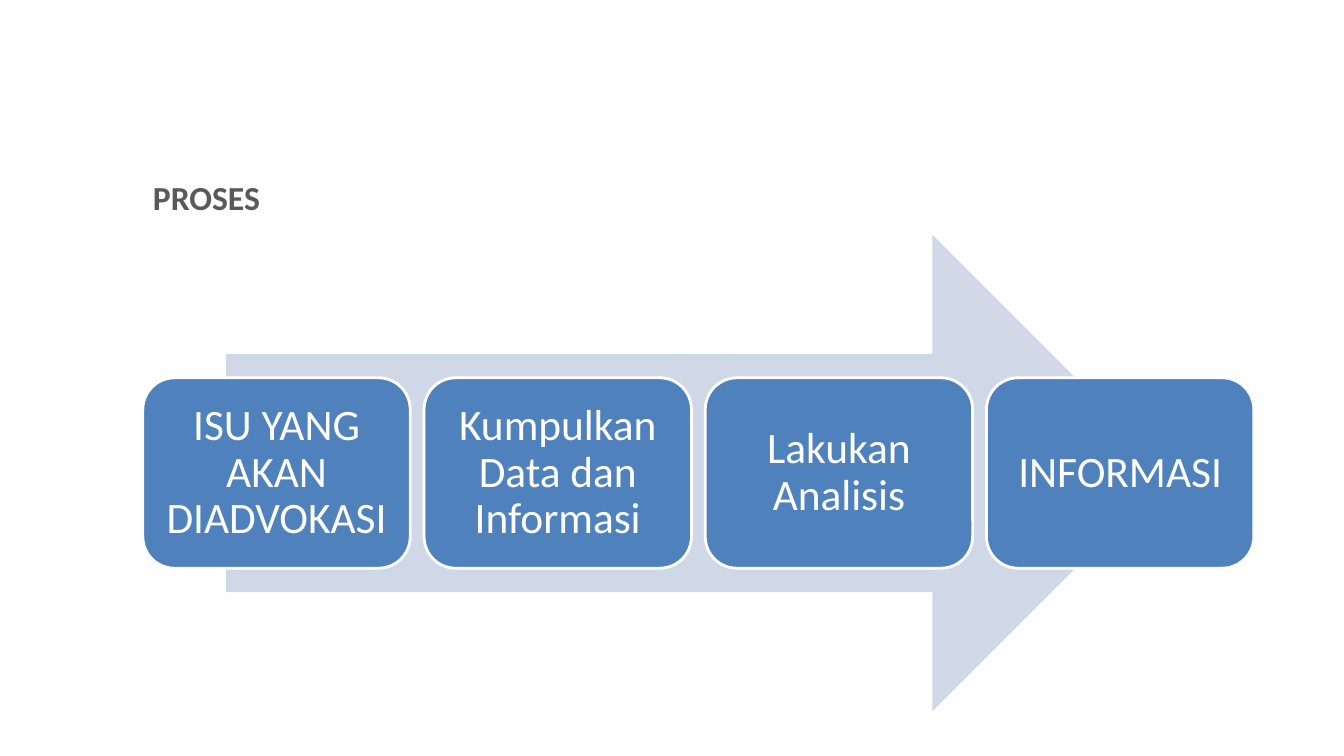
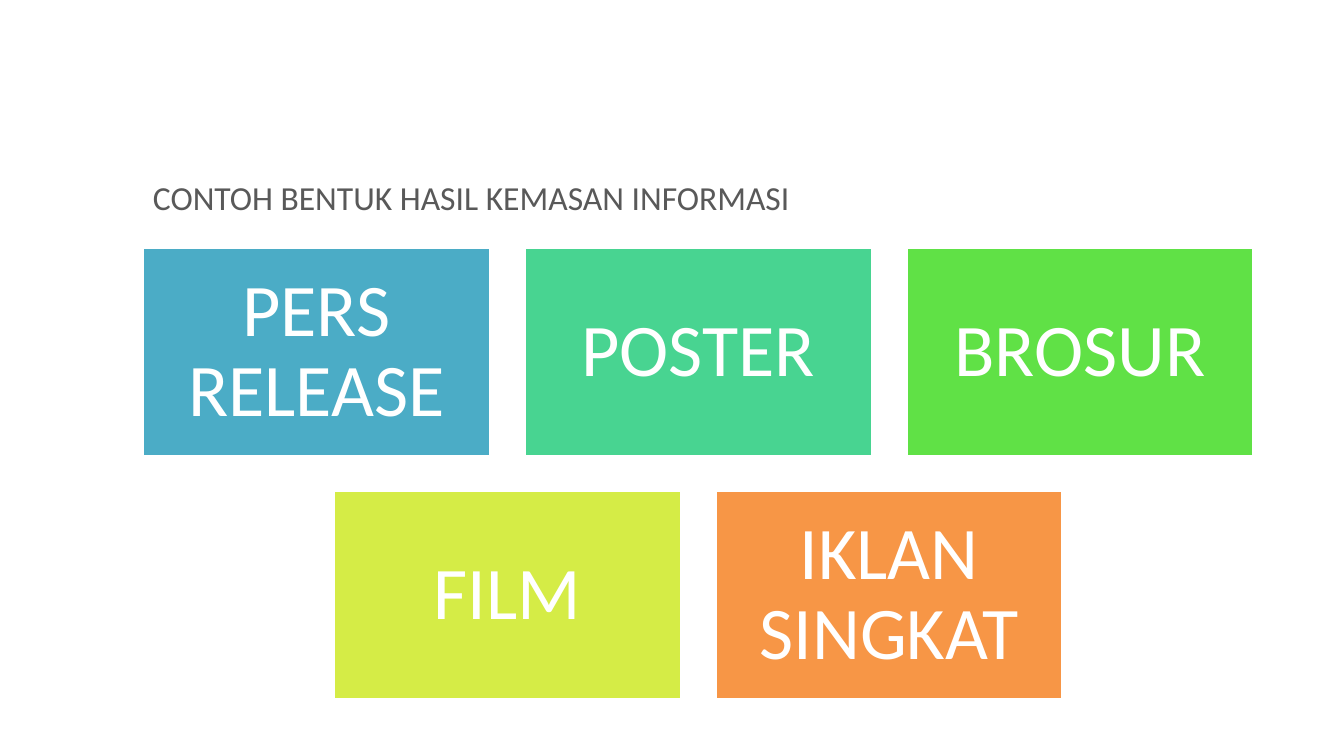
from dataclasses import dataclass

from pptx import Presentation
from pptx.dml.color import RGBColor
from pptx.enum.shapes import MSO_SHAPE
from pptx.enum.text import MSO_ANCHOR, MSO_AUTO_SIZE, PP_ALIGN
from pptx.util import Cm, Pt

ARROW, ROUNDED, RECT = (MSO_SHAPE.RIGHT_ARROW, MSO_SHAPE.ROUNDED_RECTANGLE,
                        MSO_SHAPE.RECTANGLE)
TOP, MIDDLE = MSO_ANCHOR.TOP, MSO_ANCHOR.MIDDLE
LEFT, CENTER = PP_ALIGN.LEFT, PP_ALIGN.CENTER
NO_FIT = MSO_AUTO_SIZE.NONE
TITLE_ONLY = 5


@dataclass(frozen=True)
class Theme:
    font: str = "Calibri"
    title: str = "595959"
    white: str = "FFFFFF"
    arrow: str = "D0D8E8"
    step: str = "4F81BD"
    title_size: int = 24
    step_size: int = 31
    tile_size: int = 53
    outline: int = 2


THEME = Theme()

# Content area shared by both slides, in cm
AREA_LEFT, AREA_WIDTH = 3.6, 28

STEPS = ["ISU YANG AKAN DIADVOKASI", "Kumpulkan Data dan Informasi",
         "Lakukan Analisis", "INFORMASI"]
TILE_ROWS = [
    [("PERS RELEASE", "4BACC6"), ("POSTER", "48D491"), ("BROSUR", "60E146")],
    [("FILM", "D5EC46"), ("IKLAN SINGKAT", "F79646")],
]


def set_attrs(obj, **values):
    for name, value in values.items():
        setattr(obj, name, value)


def write(sp, text, size, color, align, anchor, bold=False, inset=None, **spacing):
    tf = sp.text_frame
    set_attrs(tf, text=text, word_wrap=True, auto_size=NO_FIT, vertical_anchor=anchor)
    if inset is not None:
        for side in ("left", "top", "right", "bottom"):
            setattr(tf, f"margin_{side}", Cm(inset))
    p = tf.paragraphs[0]
    set_attrs(p, alignment=align, **spacing)
    font = p.runs[0].font
    set_attrs(font, name=THEME.font, size=Pt(size), bold=bold)
    font.color.rgb = RGBColor.from_string(color)


def add_slide(prs, title, bold=False):
    s = prs.slides.add_slide(prs.slide_layouts[TITLE_ONLY])
    sp = s.shapes.title
    set_attrs(sp, left=Cm(AREA_LEFT), top=Cm(4.32), width=Cm(AREA_WIDTH), height=Cm(1.2))
    write(sp, title, THEME.title_size, THEME.title, LEFT, TOP, bold)
    return s


def add_block(s, kind, left, top, width, height, fill):
    sp = s.shapes.add_shape(kind, Cm(left), Cm(top), Cm(width), Cm(height))
    sp.shadow.inherit = False
    sp.fill.solid()
    sp.fill.fore_color.rgb = RGBColor.from_string(fill)
    sp.line.fill.background()
    return sp


def add_card(s, kind, box, fill, text, size, inset):
    sp = add_block(s, kind, *box, fill)
    sp.line.color.rgb = RGBColor.from_string(THEME.white)
    sp.line.width = Pt(THEME.outline)
    write(sp, text, size, THEME.white, CENTER, MIDDLE, inset=inset, line_spacing=0.9)


def row_lefts(count, width, gap):
    """Left edges of a row centred in the content area."""
    start = AREA_LEFT + (AREA_WIDTH - count * width - (count - 1) * gap) / 2
    return [start + i * (width + gap) for i in range(count)]


def build_process(prs):
    s = add_slide(prs, "PROSES", bold=True)

    # Arrow behind the steps
    top, width, height = 5.92, 23.8, 12
    add_block(s, ARROW, row_lefts(1, width, 0)[0], top, width, height, THEME.arrow)

    # Steps, centred on the arrow
    step_w, step_h = 6.74, 4.8
    gap = (AREA_WIDTH - len(STEPS) * step_w) / (len(STEPS) - 1)
    step_top = top + (height - step_h) / 2
    for text, left in zip(STEPS, row_lefts(len(STEPS), step_w, gap)):
        add_card(s, ROUNDED, (left, step_top, step_w, step_h), THEME.step,
                 text, THEME.step_size, 0.3)


def build_examples(prs):
    s = add_slide(prs, "CONTOH BENTUK HASIL KEMASAN INFORMASI")

    # Rows of tiles, each centred
    top, width, height = 6.25, 8.75, 5.25
    gap = width / 10
    for i, row in enumerate(TILE_ROWS):
        row_top = top + i * (height + gap)
        for (text, fill), left in zip(row, row_lefts(len(row), width, gap)):
            add_card(s, RECT, (left, row_top, width, height), fill,
                     text, THEME.tile_size, 0.56)


def main():
    prs = Presentation()
    set_attrs(prs, slide_width=Cm(33.87), slide_height=Cm(19.05))
    build_process(prs)
    build_examples(prs)
    prs.save("out.pptx")


if __name__ == "__main__":
    main()
